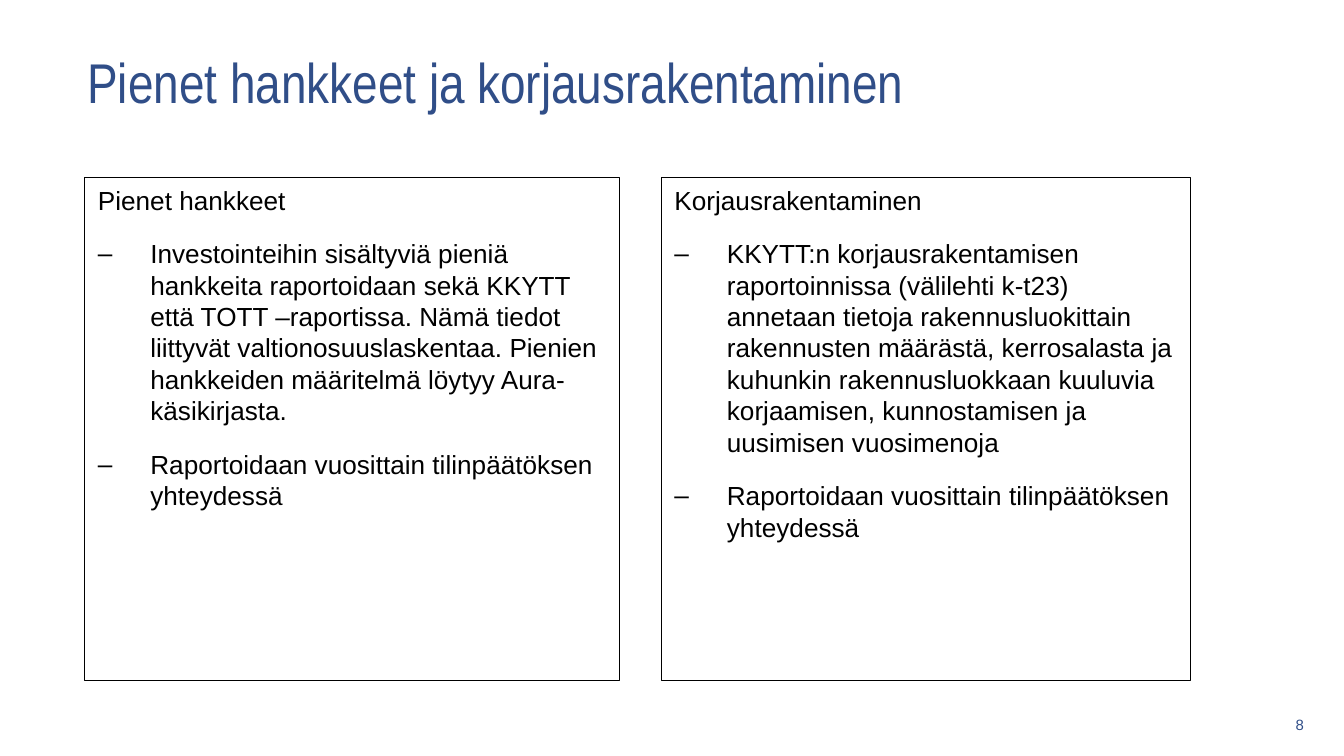
from dataclasses import dataclass

from lxml import etree
from pptx import Presentation
from pptx.dml.color import RGBColor
from pptx.enum.shapes import MSO_SHAPE
from pptx.enum.text import MSO_ANCHOR, PP_ALIGN
from pptx.oxml.ns import qn
from pptx.util import Inches, Pt

RECTANGLE = MSO_SHAPE.RECTANGLE
TOP, MIDDLE = MSO_ANCHOR.TOP, MSO_ANCHOR.MIDDLE
LEFT, RIGHT = PP_ALIGN.LEFT, PP_ALIGN.RIGHT
TITLE_ONLY = 5
BLUE, BLACK = "304E88", "000000"
SLIDE_WIDTH = Inches(10)
SLIDE_HEIGHT = SLIDE_WIDTH * 9 // 16
PANEL_TOP, PANEL_HEIGHT = 1.32, 3.74
BULLET_INDENT = Inches(0.39)


@dataclass
class Panel:
    left: float
    width: float
    heading: str
    bullets: list[str]


YEARLY_REPORT = "Raportoidaan vuosittain tilinpäätöksen yhteydessä"
PANELS = [
    Panel(0.63, 3.98, "Pienet hankkeet", [
        "Investointeihin sisältyviä pieniä hankkeita raportoidaan sekä KKYTT "
        "että TOTT –raportissa. Nämä tiedot liittyvät valtionosuuslaskentaa. "
        "Pienien hankkeiden määritelmä löytyy Aura-käsikirjasta.",
        YEARLY_REPORT,
    ]),
    Panel(4.92, 3.94, "Korjausrakentaminen", [
        "KKYTT:n korjausrakentamisen raportoinnissa (välilehti k-t23) annetaan "
        "tietoja rakennusluokittain rakennusten määrästä, kerrosalasta ja "
        "kuhunkin rakennusluokkaan kuuluvia korjaamisen, kunnostamisen ja "
        "uusimisen vuosimenoja",
        YEARLY_REPORT,
    ]),
]


def color(value: str) -> RGBColor:
    return RGBColor.from_string(value)


def write(para, text: str, size: float, value: str, align, font: str = "Arial") -> None:
    para.text = text
    para.alignment = align
    for span in para.runs:
        span.font.name = font
        span.font.size = Pt(size)
        span.font.color.rgb = color(value)


def add_dash(para) -> None:
    """Give the paragraph a hanging dash bullet."""
    properties = para._p.get_or_add_pPr()
    properties.set("marL", str(BULLET_INDENT))
    properties.set("indent", str(-BULLET_INDENT))
    etree.SubElement(properties, qn("a:buFont")).set("typeface", "Arial")
    etree.SubElement(properties, qn("a:buChar")).set("char", "‒")


def add_panel(page, panel: Panel) -> None:
    box = page.shapes.add_shape(RECTANGLE, Inches(panel.left), Inches(PANEL_TOP),
                                Inches(panel.width), Inches(PANEL_HEIGHT))
    box.shadow.inherit = False
    box.fill.background()
    box.line.color.rgb = color(BLACK)
    box.line.width = Pt(0.25)
    frame = box.text_frame
    frame.word_wrap = True
    frame.vertical_anchor = TOP
    for index, text in enumerate([panel.heading, *panel.bullets]):
        para = frame.add_paragraph() if index else frame.paragraphs[0]
        if index:
            add_dash(para)
        para.space_after = Pt(12)
        write(para, text, 14, BLACK, LEFT)


def add_title(page, text: str) -> None:
    title = page.shapes.title
    title.left, title.top = Inches(0.55), Inches(0.12)
    title.width, title.height = Inches(8.07), Inches(0.97)
    title.text_frame.vertical_anchor = MIDDLE
    write(title.text_frame.paragraphs[0], text, 30, BLUE, LEFT, "Arial Narrow")


def add_page_number(page, number: str) -> None:
    box = page.shapes.add_textbox(Inches(9.28), Inches(5.27), Inches(0.52), Inches(0.24))
    frame = box.text_frame
    frame.word_wrap = True
    frame.vertical_anchor = MIDDLE
    write(frame.paragraphs[0], number, 8, BLUE, RIGHT)


def main() -> None:
    deck = Presentation()
    deck.slide_width, deck.slide_height = SLIDE_WIDTH, SLIDE_HEIGHT
    page = deck.slides.add_slide(deck.slide_layouts[TITLE_ONLY])
    add_title(page, "Pienet hankkeet ja korjausrakentaminen")
    for panel in PANELS:
        add_panel(page, panel)
    add_page_number(page, "8")
    deck.save("out.pptx")


if __name__ == "__main__":
    main()
